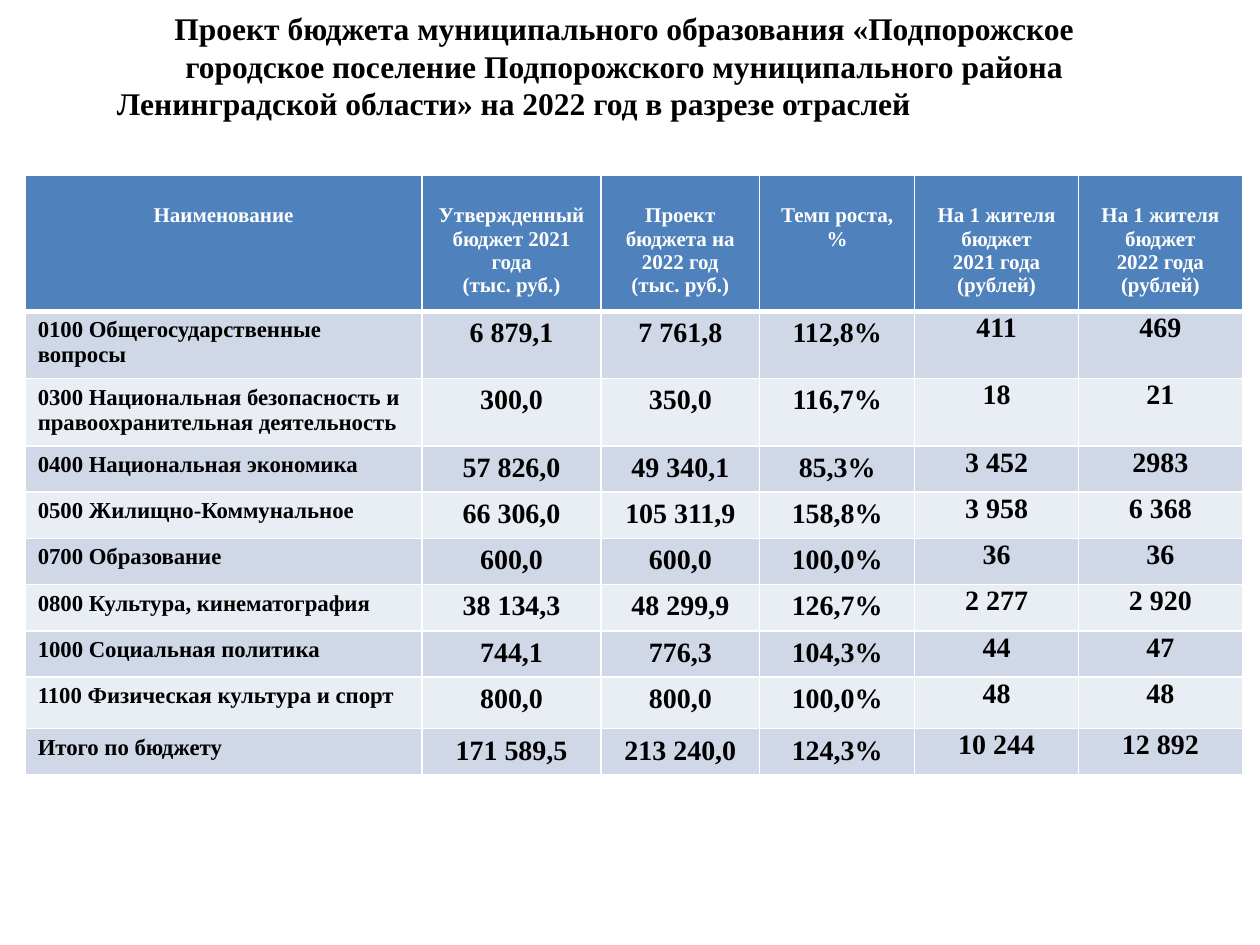
from pptx import Presentation
from pptx.dml.color import RGBColor
from pptx.enum.text import MSO_ANCHOR, PP_ALIGN
from pptx.oxml import parse_xml
from pptx.oxml.ns import nsdecls
from pptx.util import Inches, Pt

CENTER, LEFT = PP_ALIGN.CENTER, PP_ALIGN.LEFT
TITLE = [
    ("Проект бюджета муниципального образования «Подпорожское городское "
     "поселение Подпорожского муниципального района", CENTER),
    ("Ленинградской области» на 2022 год в разрезе отраслей", LEFT),
]
HEADER = [
    "Наименование",
    "Утвержденный бюджет 2021 года\n(тыс. руб.)",
    "Проект бюджета на 2022 год\n(тыс. руб.)",
    "Темп роста, %",
    "На 1 жителя бюджет\n2021 года (рублей)",
    "На 1 жителя бюджет\n2022 года\n(рублей)",
]
BUDGET = [
    ["0100 Общегосударственные вопросы", "6 879,1", "7 761,8", "112,8%", "411", "469"],
    ["0300 Национальная безопасность и правоохранительная деятельность",
     "300,0", "350,0", "116,7%", "18", "21"],
    ["0400 Национальная экономика", "57 826,0", "49 340,1", "85,3%", "3 452", "2983"],
    ["0500 Жилищно-Коммунальное", "66 306,0", "105 311,9", "158,8%", "3 958", "6 368"],
    ["0700 Образование", "600,0", "600,0", "100,0%", "36", "36"],
    ["0800 Культура, кинематография", "38 134,3", "48 299,9", "126,7%", "2 277", "2 920"],
    ["1000 Социальная политика", "744,1", "776,3", "104,3%", "44", "47"],
    ["1100 Физическая культура и спорт", "800,0", "800,0", "100,0%", "48", "48"],
    ["Итого по бюджету", "171 589,5", "213 240,0", "124,3%", "10 244", "12 892"],
]
COL_WIDTHS = [3.15, 1.42, 1.26, 1.23, 1.3, 1.3]
ROW_HEIGHTS = [1.01, 0.49, 0.53] + [0.36] * 5 + [0.41, 0.36]
BANDS = ["D0D8E8", "E9EDF4"]


def rgb(color):
    return RGBColor.from_string(color)


def write(p, text, size, color, align):
    p.alignment = align
    r = p.add_run()
    r.text = text
    font = {"name": "Times New Roman", "size": Pt(size), "bold": True}
    for name, value in font.items():
        setattr(r.font, name, value)
    r.font.color.rgb = rgb(color)


prs = Presentation()
prs.slide_width, prs.slide_height = Inches(10), Inches(7.5)
s = prs.slides.add_slide(prs.slide_layouts[6])

# Title
sp = s.shapes.add_textbox(Inches(0.83), Inches(0.13), Inches(8.25), Inches(1.01))
tf = sp.text_frame
frame = {"word_wrap": True, "vertical_anchor": MSO_ANCHOR.MIDDLE,
         "margin_top": 0, "margin_bottom": Inches(0.23)}
for name, value in frame.items():
    setattr(tf, name, value)
for i, (text, align) in enumerate(TITLE):
    p = tf.add_paragraph() if i else tf.paragraphs[0]
    write(p, text, 18, "000000", align)

# Budget table
rows = [HEADER] + BUDGET
table = s.shapes.add_table(len(rows), len(HEADER), Inches(0.2), Inches(1.39),
                           Inches(sum(COL_WIDTHS)), Inches(sum(ROW_HEIGHTS))).table
for col, width in zip(table.columns, COL_WIDTHS):
    col.width = Inches(width)
for row, height in zip(table.rows, ROW_HEIGHTS):
    row.height = Inches(height)

for i, values in enumerate(rows):
    for j, value in enumerate(values):
        cell = table.cell(i, j)
        if i == 0:
            size, color, fill = 12, "FFFFFF", "4F81BD"
            cell.margin_top = Inches(0.23)
        else:
            size, color, fill = 16 if j else 13, "000000", BANDS[(i - 1) % 2]
            if j >= 4:
                cell.margin_left = cell.margin_right = cell.margin_top = Inches(0.01)
                cell.margin_bottom = 0
        for k, line in enumerate(value.split("\n")):
            tf = cell.text_frame
            p = tf.add_paragraph() if k else tf.paragraphs[0]
            write(p, line, size, color, LEFT if i and not j else CENTER)

        # Borders come before the fill in the cell properties
        tc_pr = cell._tc.get_or_add_tcPr()
        for side in "LRTB":
            thick = (i, side) in ((0, "B"), (1, "T"))
            tc_pr.append(parse_xml(
                f'<a:ln{side} {nsdecls("a")} w="{Pt(3 if thick else 1)}"><a:solidFill>'
                f'<a:srgbClr val="FFFFFF"/></a:solidFill></a:ln{side}>'))
        cell.fill.solid()
        cell.fill.fore_color.rgb = rgb(fill)

prs.save("out.pptx")
